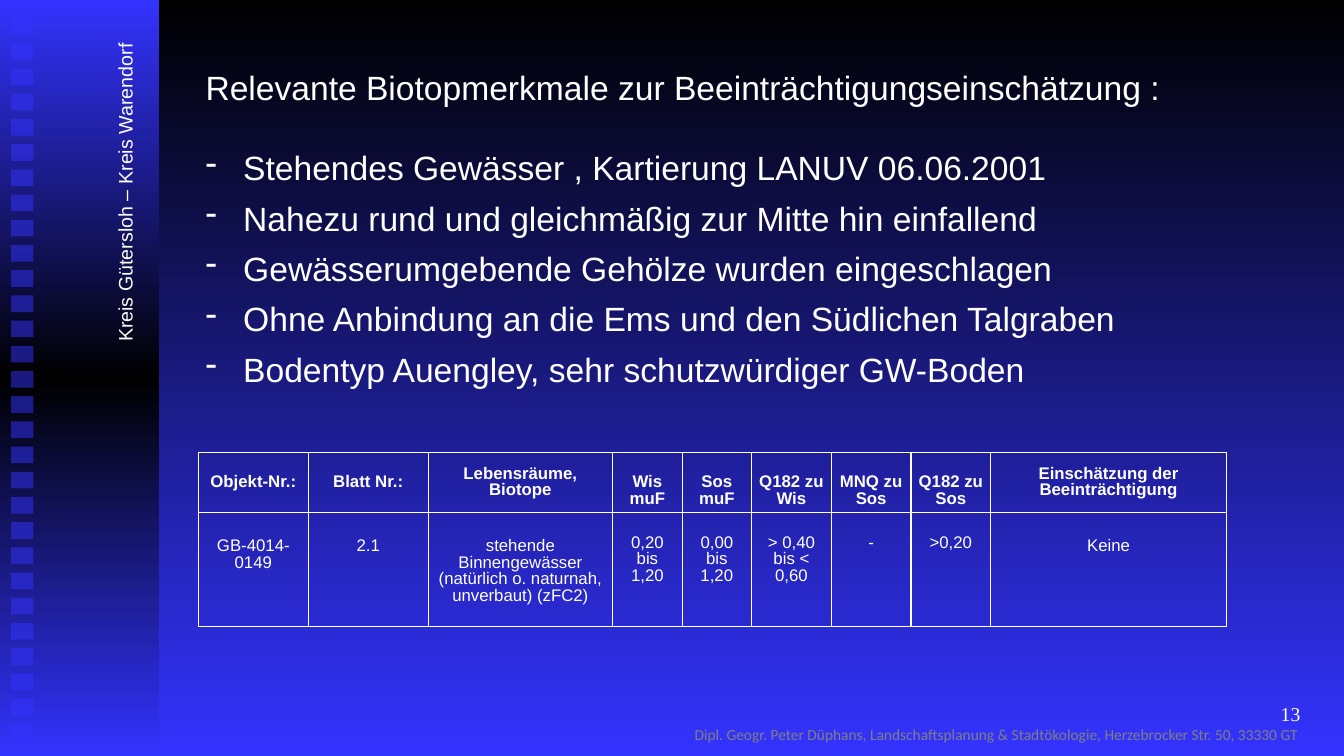
from copy import deepcopy

from lxml import etree
from pptx import Presentation
from pptx import util as u
from pptx.dml.color import RGBColor
from pptx.enum import shapes, text
from pptx.oxml import ns

BLUE, BLACK, WHITE, GREY = "3333FF", "000000", "FFFFFF", "808080"
LEFT, CENTER, RIGHT = text.PP_ALIGN.LEFT, text.PP_ALIGN.CENTER, text.PP_ALIGN.RIGHT
TOP, MIDDLE = text.MSO_ANCHOR.TOP, text.MSO_ANCHOR.MIDDLE


def rgb(hex_color):
    return RGBColor.from_string(hex_color)


def sub(parent, tag, **attrs):
    return etree.SubElement(parent, ns.qn(tag), **attrs)


def put_text(p, content, size=24, font="Arial", color=WHITE, bold=False, align=LEFT):
    p.alignment = align
    r = p.add_run()
    r.text = content
    r.font.size = u.Pt(size)
    r.font.name = font
    r.font.bold = bold
    r.font.color.rgb = rgb(color)


class SlideBuilder:
    line_width = u.Pt(1)
    cell_inset = u.Cm(0.18)

    def __init__(self, prs):
        self.s = prs.slides.add_slide(prs.slide_layouts[6])

    def gradient(self, fill, element, colors):
        """Vertical gradient with evenly spaced stops."""
        fill.gradient()
        fill.gradient_angle = 270
        stop_list = element.xpath(".//a:gsLst")[0]
        while len(stop_list) < len(colors):
            stop_list.append(deepcopy(stop_list[0]))
        for i, (stop, color) in enumerate(zip(fill.gradient_stops, colors)):
            stop.position = i / (len(colors) - 1)
            stop.color.rgb = rgb(color)

    def background(self, colors):
        self.gradient(self.s.background.fill, self.s.element, colors)

    def rect(self, x, y, w, h, colors, alpha=None):
        sp = self.s.shapes.add_shape(shapes.MSO_SHAPE.RECTANGLE,
                                     u.Cm(x), u.Cm(y), u.Cm(w), u.Cm(h))
        sp.shadow.inherit = False
        sp.line.fill.background()
        if len(colors) > 1:
            self.gradient(sp.fill, sp.element, colors)
        else:
            sp.fill.solid()
            sp.fill.fore_color.rgb = rgb(colors[0])
        if alpha:
            sub(sp.element.xpath("./p:spPr/a:solidFill/a:srgbClr")[0],
                "a:alpha", val=str(alpha * 1000))

    def textbox(self, x, y, w, h, lines, anchor=TOP, rotation=0,
                bullet=None, gap=0, **fmt):
        sp = self.s.shapes.add_textbox(u.Cm(x), u.Cm(y), u.Cm(w), u.Cm(h))
        sp.rotation = rotation
        tf = sp.text_frame
        tf.word_wrap = True
        tf.vertical_anchor = anchor
        for i, line in enumerate(lines):
            p = tf.add_paragraph() if i else tf.paragraphs[0]
            if bullet:
                indent = u.Cm(0.95)
                ppr = p._p.get_or_add_pPr()
                ppr.set("marL", str(indent))
                ppr.set("indent", str(-indent))
                sub(ppr, "a:buChar", char=bullet)
            if i:
                p.space_before = u.Pt(gap)
            put_text(p, line, **fmt)

    def cell(self, cell, content, top, anchor, bold):
        cell.fill.background()
        cell.vertical_anchor = anchor
        cell.margin_left = cell.margin_right = self.cell_inset
        cell.margin_top, cell.margin_bottom = u.Cm(top), 0
        p = cell.text_frame.paragraphs[0]
        p.line_spacing = u.Pt(12)
        put_text(p, content, size=12, bold=bold, align=CENTER)
        # Borders come before the fill
        tcpr = cell._tc.get_or_add_tcPr()
        for i, side in enumerate("LRTB"):
            ln = sub(tcpr, f"a:ln{side}", w=str(self.line_width))
            sub(sub(ln, "a:solidFill"), "a:srgbClr", val=WHITE)
            tcpr.insert(i, ln)

    def table(self, x, y, widths, heights, rows, tops):
        """tops: per row, the top inset of each cell; 0 centres the text."""
        frame = self.s.shapes.add_table(len(rows), len(widths), u.Cm(x), u.Cm(y),
                                        u.Cm(sum(widths)), u.Cm(sum(heights)))
        tbl = frame.table
        for col, w in zip(tbl.columns, widths):
            col.width = u.Cm(w)
        for i, (row, h) in enumerate(zip(tbl.rows, heights)):
            row.height = u.Cm(h)
            for cell, content, top in zip(row.cells, rows[i], tops[i]):
                self.cell(cell, content, top, TOP if top else MIDDLE, i == 0)


def main():
    prs = Presentation()
    prs.slide_width, prs.slide_height = u.Cm(33.87), u.Cm(19.05)
    b = SlideBuilder(prs)

    # Background and side band with its squares
    b.background([BLACK, BLUE])
    b.rect(0, 0, 4.02, 19.05, [BLUE, BLACK, BLUE])
    for i in range(29):
        b.rect(0.28, 0.46 + i * 0.635, 0.56, 0.42, [BLUE], alpha=50)

    # Footer and district label
    b.textbox(16.38, 17.86, 17.48, 1.27,
              ["Dipl. Geogr. Peter Düphans, Landschaftsplanung & Stadtökologie, "
               "Herzebrocker Str. 50, 33330 GT"],
              anchor=MIDDLE, size=11, font="Calibri", color=GREY, align=CENTER)
    b.textbox(-1.24, 4.04, 8.79, 0.86, ["Kreis Gütersloh – Kreis Warendorf"],
              rotation=270, size=14)

    # Features and heading
    b.textbox(4.93, 3.58, 23.8, 6.25, [
        "Stehendes Gewässer , Kartierung LANUV 06.06.2001",
        "Nahezu rund und gleichmäßig zur Mitte hin einfallend",
        "Gewässerumgebende Gehölze wurden eingeschlagen",
        "Ohne Anbindung an die Ems und den Südlichen Talgraben",
        "Bodentyp Auengley, sehr schutzwürdiger GW-Boden",
    ], bullet="-", gap=7.2)
    b.textbox(4.93, 1.56, 25.6, 1.27,
              ["Relevante Biotopmerkmale zur Beeinträchtigungseinschätzung :"])

    # Slide number
    b.textbox(25.96, 17.35, 7.06, 1.27, ["13"], anchor=MIDDLE, size=14,
              font="Times New Roman", align=RIGHT)

    # Assessment table
    high, low = 0.56, 0.64
    b.table(5, 11.4, [2.77, 3.02, 4.65, 1.75, 1.75, 2.01, 2.01, 2.01, 5.94],
            [1.52, 2.87], [
        ["Objekt-Nr.:", "Blatt Nr.:", "Lebensräume, Biotope", "Wis muF", "Sos muF",
         "Q182 zu Wis", "MNQ zu Sos", "Q182 zu Sos",
         "Einschätzung der Beeinträchtigung"],
        ["GB-4014-0149", "2.1",
         "stehende Binnengewässer (natürlich o. naturnah, unverbaut) (zFC2)",
         "0,20 bis 1,20", "0,00 bis 1,20", "> 0,40 bis < 0,60", "-", ">0,20",
         "Keine"],
    ], [[0] * 3 + [high] * 5 + [0], [low] * 3 + [high] * 5 + [low]])

    prs.save("out.pptx")


if __name__ == "__main__":
    main()
